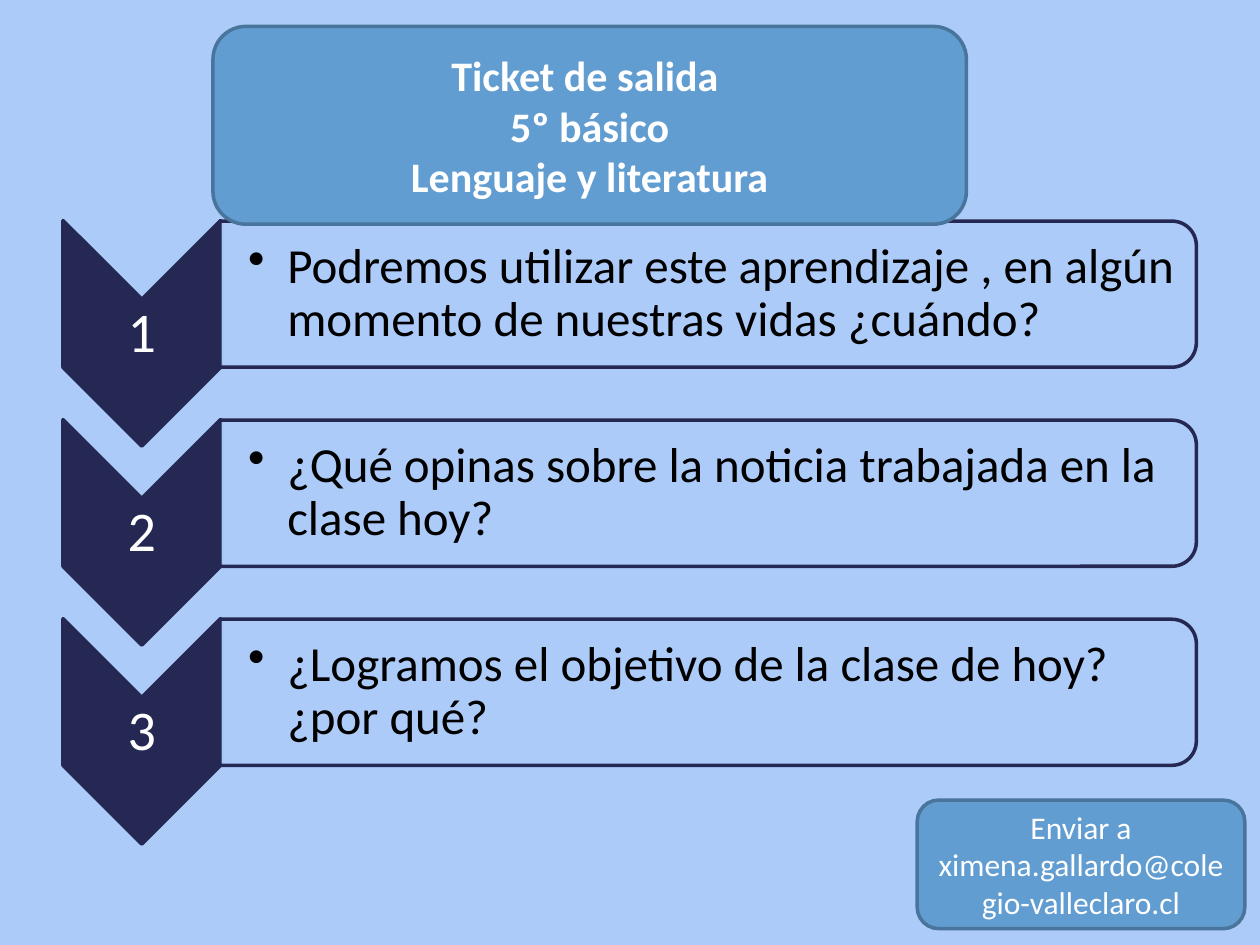
from dataclasses import dataclass

from lxml import etree
from pptx import Presentation
from pptx.dml.color import RGBColor
from pptx.enum.shapes import MSO_SHAPE
from pptx.enum.text import MSO_ANCHOR, PP_ALIGN
from pptx.oxml.ns import qn
from pptx.util import Inches, Pt

CHEVRON = MSO_SHAPE.CHEVRON
ROUND_TOP = MSO_SHAPE.ROUND_2_SAME_RECTANGLE
ROUNDED = MSO_SHAPE.ROUNDED_RECTANGLE
MIDDLE = MSO_ANCHOR.MIDDLE
CENTER, LEFT = PP_ALIGN.CENTER, PP_ALIGN.LEFT


@dataclass(frozen=True)
class Theme:
    font: str = "Calibri"
    background: RGBColor = RGBColor(0xAC, 0xCB, 0xF9)
    navy: RGBColor = RGBColor(0x24, 0x28, 0x52)
    blue: RGBColor = RGBColor(0x62, 0x9D, 0xD1)
    outline: RGBColor = RGBColor(0x49, 0x74, 0x9B)
    white: RGBColor = RGBColor(0xFF, 0xFF, 0xFF)
    black: RGBColor = RGBColor(0, 0, 0)
    number_size: Pt = Pt(32)
    question_size: Pt = Pt(28)
    title_size: Pt = Pt(24)
    contact_size: Pt = Pt(18)
    line_width: Pt = Pt(2)


theme = Theme()


def add_block(shapes, kind, box, fill, line, rotation=0):
    block = shapes.add_shape(kind, *map(Inches, box))
    block.rotation = rotation
    block.shadow.inherit = False
    block.fill.solid()
    block.fill.fore_color.rgb = fill
    block.line.color.rgb = line
    block.line.width = theme.line_width
    return block


def write(holder, lines, size, color, align=CENTER, bold=False):
    frame = holder.text_frame
    frame.word_wrap = True
    frame.vertical_anchor = MIDDLE
    frame.text = "\n".join(lines)
    for paragraph in frame.paragraphs:
        paragraph.alignment = align
        paragraph.font.name = theme.font
        paragraph.font.size = size
        paragraph.font.bold = bold
        paragraph.font.color.rgb = color
    return frame


prs = Presentation()
prs.slide_width = Inches(10)
prs.slide_height = Inches(7.5)
slide = prs.slides.add_slide(prs.slide_layouts[6])
slide.background.fill.solid()
slide.background.fill.fore_color.rgb = theme.background

questions = [
    "Podremos utilizar este aprendizaje , en algún momento de nuestras vidas ¿cuándo?",
    "¿Qué opinas sobre la noticia trabajada en la clase hoy?",
    "¿Logramos el objetivo de la clase de hoy? ¿por qué?",
]
row_pitch = 1.58
question_list = slide.shapes.add_group_shape().shapes

for index, question in enumerate(questions):
    offset = index * row_pitch
    add_block(question_list, CHEVRON, (0.23, 2.02 + offset, 1.79, 1.25),
              theme.navy, theme.navy, 90)
    number = question_list.add_textbox(
        Inches(0.5), Inches(2.38 + offset), Inches(1.25), Inches(0.54))
    number_frame = write(number, [str(index + 1)], theme.number_size, theme.white)

    panel = add_block(question_list, ROUND_TOP, (5.04, -1.54 + offset, 1.16, 7.75),
                      theme.background, theme.navy, 90)
    panel_color = panel.fill._xPr.find(qn("a:solidFill"))[0]
    etree.SubElement(panel_color, qn("a:alpha"), val="90000")
    prompt = question_list.add_textbox(
        Inches(1.75), Inches(1.81 + offset), Inches(7.69), Inches(1.05))
    prompt_frame = write(prompt, [question], theme.question_size, theme.black, LEFT)

    for frame in (number_frame, prompt_frame):
        frame.margin_left = frame.margin_right = Inches(0.02)
        frame.margin_top = frame.margin_bottom = Inches(0.02)
        frame.paragraphs[0].line_spacing = 0.9
    prompt_frame.margin_left = Inches(0.22)

    bullet_item = prompt_frame.paragraphs[0]
    bullet_item.level = 1
    properties = bullet_item._p.get_or_add_pPr()
    properties.set("marL", str(Inches(0.31)))
    properties.set("indent", str(-Inches(0.31)))
    bullet = etree.Element(qn("a:buChar"), char="•")
    properties.find(qn("a:defRPr")).addprevious(bullet)

title = add_block(slide.shapes, ROUNDED, (1.69, 0.21, 5.98, 1.57),
                  theme.blue, theme.outline)
write(title, ["Ticket de salida ", "5º básico", "Lenguaje y literatura"],
      theme.title_size, theme.white, bold=True)

contact = add_block(slide.shapes, ROUNDED, (7.28, 6.35, 2.6, 1.02),
                    theme.blue, theme.outline)
write(contact, ["Enviar a ximena.gallardo@colegio-valleclaro.cl"],
      theme.contact_size, theme.white)

prs.save("out.pptx")
